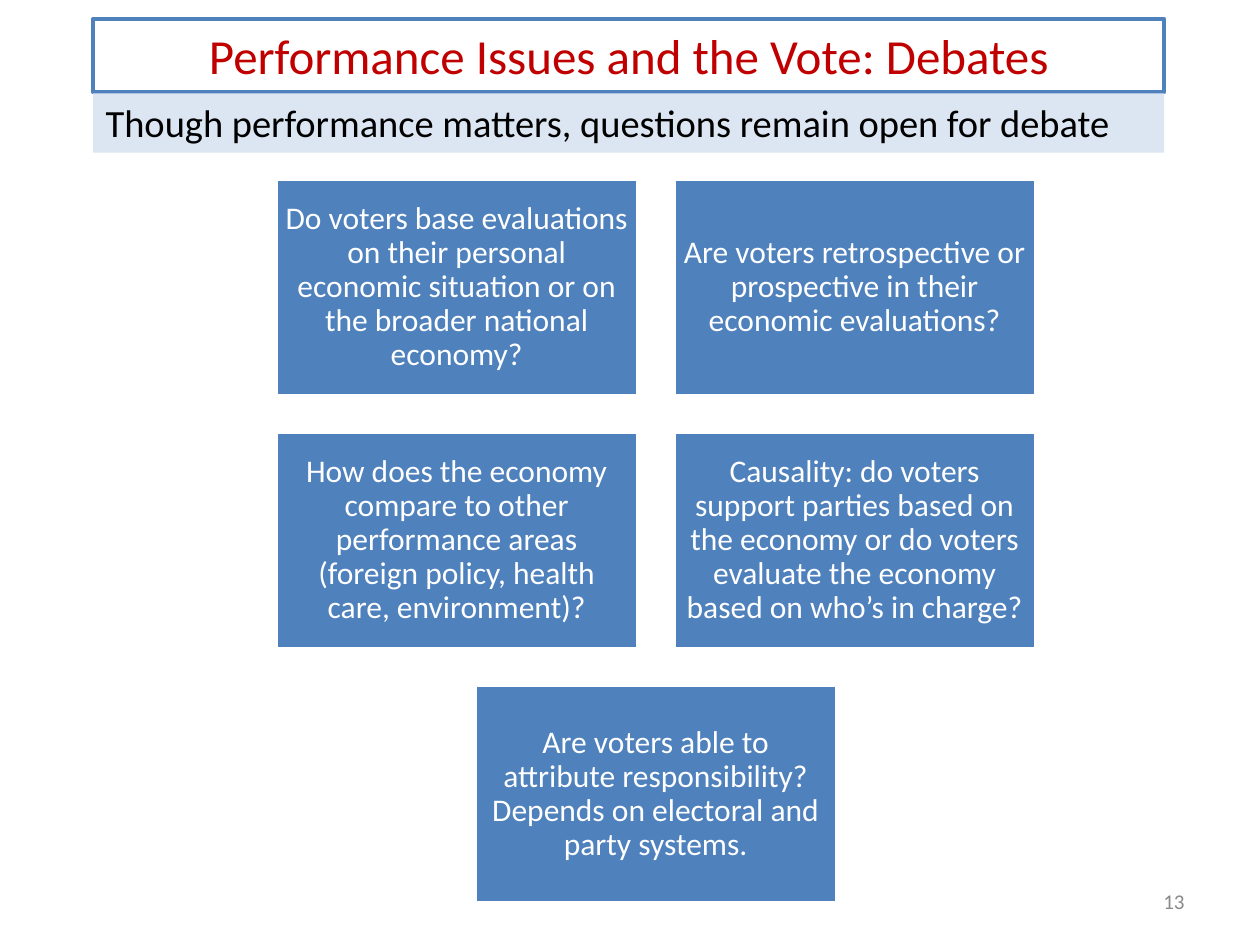
"""Build the slide on performance issues and the vote."""
from dataclasses import dataclass
from typing import Optional

from pptx import Presentation
from pptx.dml.color import RGBColor
from pptx.enum.shapes import MSO_SHAPE as Preset
from pptx.enum.text import MSO_ANCHOR as Anchor, PP_ALIGN as Align
from pptx.util import Pt

COLOURS = {
    "blue": "4F81BD",
    "pale": "DCE6F2",
    "red": "C00000",
    "grey": "898989",
    "black": "000000",
    "white": "FFFFFF",
}
CARD_WIDTH, CARD_HEIGHT = 206.6, 124
CARD_GAP = 20.8
GRID_LEFT, GRID_TOP = 157.7, 102.2
COLUMNS = 2
QUESTIONS = [
    "Do voters base evaluations on their personal economic situation or on the broader national economy?",
    "Are voters retrospective or prospective in their economic evaluations?",
    "How does the economy compare to other performance areas (foreign policy, health care, environment)?",
    "Causality: do voters support parties based on the economy or do voters evaluate the economy based on who’s in charge?",
    "Are voters able to attribute responsibility? Depends on electoral and party systems.",
]


@dataclass
class Panel:
    text: str
    left: float
    top: float
    width: float
    height: float
    size: float
    colour: str
    fill: Optional[str] = None
    line: Optional[str] = None
    line_width: float = 0
    align: Align = Align.CENTER
    anchor: Anchor = Anchor.TOP
    inset: Optional[float] = None
    line_spacing: Optional[float] = None


def rgb(name: str) -> RGBColor:
    """Return the named colour."""
    return RGBColor.from_string(COLOURS[name])


def style_text(shape, panel: Panel) -> None:
    """Write and format the text of a panel."""
    text_frame = shape.text_frame
    text_frame.text = panel.text
    text_frame.word_wrap = True
    text_frame.vertical_anchor = panel.anchor
    if panel.inset is not None:
        text_frame.margin_left = text_frame.margin_right = Pt(panel.inset)
        text_frame.margin_top = text_frame.margin_bottom = Pt(panel.inset)
    paragraph = text_frame.paragraphs[0]
    paragraph.alignment = panel.align
    paragraph.line_spacing = panel.line_spacing
    font = paragraph.runs[0].font
    font.name = "Calibri"
    font.size = Pt(panel.size)
    font.color.rgb = rgb(panel.colour)


def draw_panel(slide, panel: Panel) -> None:
    """Draw a panel as a rectangle, or as a text box if it has no fill or line."""
    place = [Pt(length) for length in (panel.left, panel.top, panel.width, panel.height)]
    if panel.fill or panel.line:
        shape = slide.shapes.add_shape(Preset.RECTANGLE, *place)
        shape.shadow.inherit = False
    else:
        shape = slide.shapes.add_textbox(*place)
    if panel.fill:
        shape.fill.solid()
        shape.fill.fore_color.rgb = rgb(panel.fill)
    else:
        shape.fill.background()
    if panel.line:
        shape.line.color.rgb = rgb(panel.line)
        shape.line.width = Pt(panel.line_width)
    else:
        shape.line.fill.background()
    style_text(shape, panel)


def question_card(index: int, text: str) -> Panel:
    """Place a question in the grid, centring a short last row."""
    row, column = divmod(index, COLUMNS)
    row_count = min(COLUMNS, len(QUESTIONS) - row * COLUMNS)
    step = CARD_WIDTH + CARD_GAP
    left = GRID_LEFT + (column + (COLUMNS - row_count) / 2) * step
    top = GRID_TOP + row * (CARD_HEIGHT + CARD_GAP)
    return Panel(text, left, top, CARD_WIDTH, CARD_HEIGHT, 18, "white",
                 fill="blue", line="white", line_width=2,
                 anchor=Anchor.MIDDLE, inset=5, line_spacing=0.9)


def main() -> None:
    """Build and save the presentation."""
    presentation = Presentation()
    presentation.slide_width, presentation.slide_height = Pt(720), Pt(540)
    slide = presentation.slides.add_slide(presentation.slide_layouts[6])
    panels = [
        Panel("Performance Issues and the Vote: Debates", 53.3, 10.8, 612, 42,
              28, "red", line="blue", line_width=2.25),
        Panel("13", 516, 500.5, 168, 28.8, 12, "grey",
              align=Align.RIGHT, anchor=Anchor.MIDDLE),
        Panel("Though performance matters, questions remain open for debate",
              53.3, 53.3, 612, 34, 22, "black", fill="pale", align=Align.LEFT),
    ]
    panels += [question_card(index, text) for index, text in enumerate(QUESTIONS)]
    for panel in panels:
        draw_panel(slide, panel)
    presentation.save("out.pptx")


if __name__ == "__main__":
    main()
